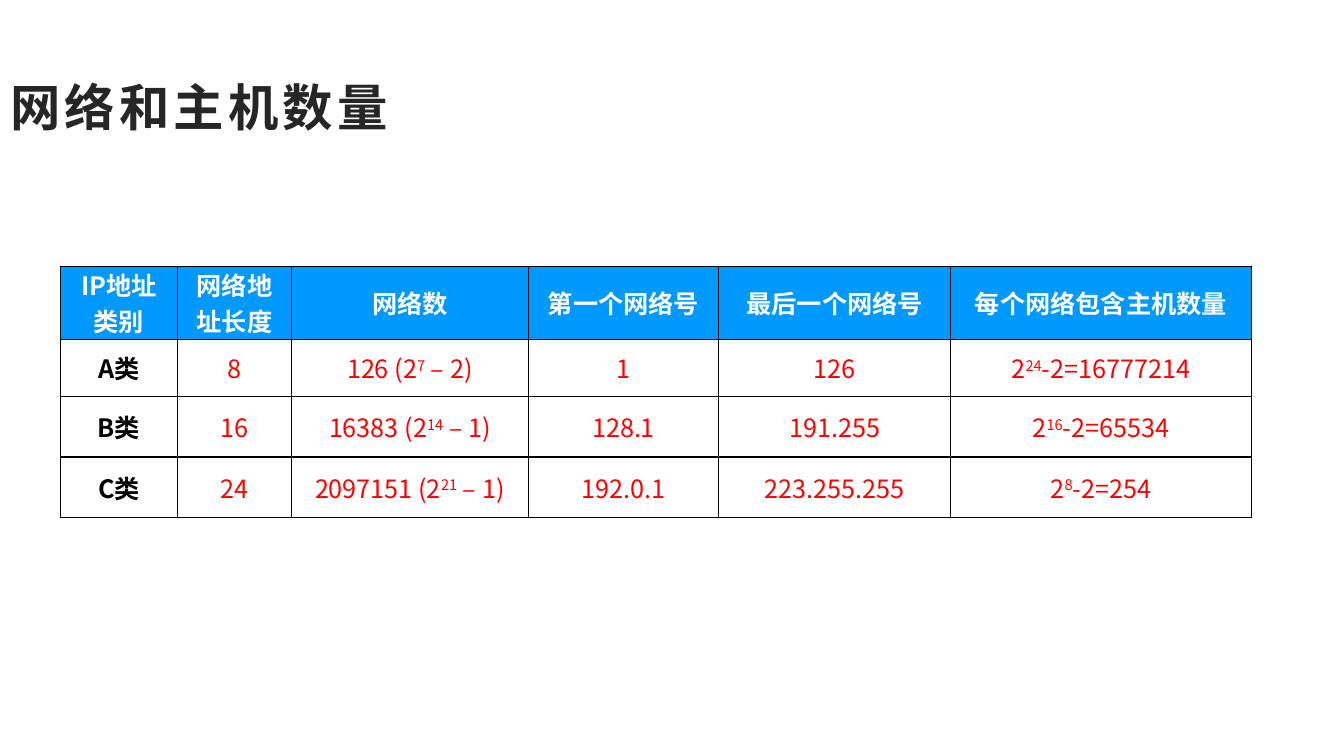
from lxml.etree import SubElement
from pptx import Presentation
from pptx.dml.color import RGBColor
from pptx.enum.text import MSO_ANCHOR, MSO_AUTO_SIZE, PP_ALIGN
from pptx.oxml.ns import qn
from pptx.util import Inches, Pt

BLACK = RGBColor(0x00, 0x00, 0x00)
CHARCOAL = RGBColor(0x26, 0x26, 0x26)
WHITE = RGBColor(0xFF, 0xFF, 0xFF)
RED = RGBColor(0xFF, 0x00, 0x00)
BLUE = RGBColor(0x00, 0x99, 0xFF)

COLUMN_WIDTHS = [1.16, 1.13, 2.35, 1.89, 2.3, 2.98]
ROW_HEIGHTS = [0.6, 0.57, 0.6, 0.6]
# Text between a pair of carets is superscript.
ADDRESS_CLASSES = [
    ["IP地址类别", "网络地址长度", "网络数", "第一个网络号", "最后一个网络号", "每个网络包含主机数量"],
    ["A类", "8", "126 (2^7^ – 2)", "1", "126", "2^24^-2=16777214"],
    ["B类", "16", "16383 (2^14^ – 1)", "128.1", "191.255", "2^16^-2=65534"],
    ["C类", "24", "2097151 (2^21^ – 1)", "192.0.1", "223.255.255", "2^8^-2=254"],
]


def set_attributes(target, values):
    for name, value in values.items():
        setattr(target, name, value)


class SlideBuilder:
    cjk_font = "Noto Sans CJK SC"
    title_font = {"name": "Arial", "size": Pt(36), "bold": True}
    cell_font = {"name": cjk_font, "size": Pt(18)}
    title_margins = {"margin_left": Inches(0.1), "margin_right": Inches(0.1),
                     "margin_top": Inches(0.05), "margin_bottom": Inches(0.05)}
    cell_format = {"margin_left": Inches(0.18), "margin_right": Inches(0.18),
                   "margin_top": 0, "margin_bottom": 0,
                   "vertical_anchor": MSO_ANCHOR.MIDDLE}

    def __init__(self, presentation):
        self.slide = presentation.slides.add_slide(presentation.slide_layouts[5])

    def add_run(self, paragraph, text, color, font_values):
        run = paragraph.add_run()
        run.text = text
        set_attributes(run.font, font_values)
        run.font.color.rgb = color
        properties = run._r.get_or_add_rPr()
        SubElement(properties, qn("a:ea"), typeface=self.cjk_font)
        return properties

    def add_title(self, text, left, top, width, height):
        title = self.slide.shapes.title
        set_attributes(title, {"left": Inches(left), "top": Inches(top),
                               "width": Inches(width), "height": Inches(height)})
        frame = title.text_frame
        set_attributes(frame, {**self.title_margins, "word_wrap": True,
                               "auto_size": MSO_AUTO_SIZE.NONE,
                               "vertical_anchor": MSO_ANCHOR.MIDDLE})
        paragraph = frame.paragraphs[0]
        paragraph.alignment = PP_ALIGN.LEFT
        properties = self.add_run(paragraph, text, CHARCOAL, self.title_font)
        properties.set("spc", "300")

    def add_borders(self, cell):
        properties = cell._tc.get_or_add_tcPr()
        for side in ("a:lnL", "a:lnR", "a:lnT", "a:lnB"):
            line = SubElement(properties, qn(side), w=str(Pt(1)))
            fill = SubElement(line, qn("a:solidFill"))
            SubElement(fill, qn("a:srgbClr"), val=str(BLACK))

    def fill_cell(self, cell, text, color, bold, background):
        set_attributes(cell, self.cell_format)
        self.add_borders(cell)
        if background is None:
            cell.fill.background()
        else:
            cell.fill.solid()
            cell.fill.fore_color.rgb = background
        paragraph = cell.text_frame.paragraphs[0]
        paragraph.alignment = PP_ALIGN.CENTER
        for index, part in enumerate(text.split("^")):
            properties = self.add_run(paragraph, part, color, {**self.cell_font, "bold": bold})
            if index % 2:
                properties.set("baseline", "30000")

    def add_table(self, rows, left, top, widths, heights):
        table = self.slide.shapes.add_table(
            len(rows), len(widths), Inches(left), Inches(top),
            Inches(sum(widths)), Inches(sum(heights))).table
        table.horz_banding = False
        for column, width in zip(table.columns, widths):
            column.width = Inches(width)
        for row, height in zip(table.rows, heights):
            row.height = Inches(height)
        for row_index, texts in enumerate(rows):
            for column_index, text in enumerate(texts):
                is_header = row_index == 0
                is_label = column_index == 0
                color = WHITE if is_header else BLACK if is_label else RED
                self.fill_cell(table.cell(row_index, column_index), text, color,
                               is_header or is_label, BLUE if is_header else None)


def main():
    presentation = Presentation()
    set_attributes(presentation, {"slide_width": Inches(13.33), "slide_height": Inches(7.5)})
    builder = SlideBuilder(presentation)
    builder.add_title("网络和主机数量", 0, 0.67, 12, 0.77)
    builder.add_table(ADDRESS_CLASSES, 0.6, 2.64, COLUMN_WIDTHS, ROW_HEIGHTS)
    presentation.save("out.pptx")


if __name__ == "__main__":
    main()
